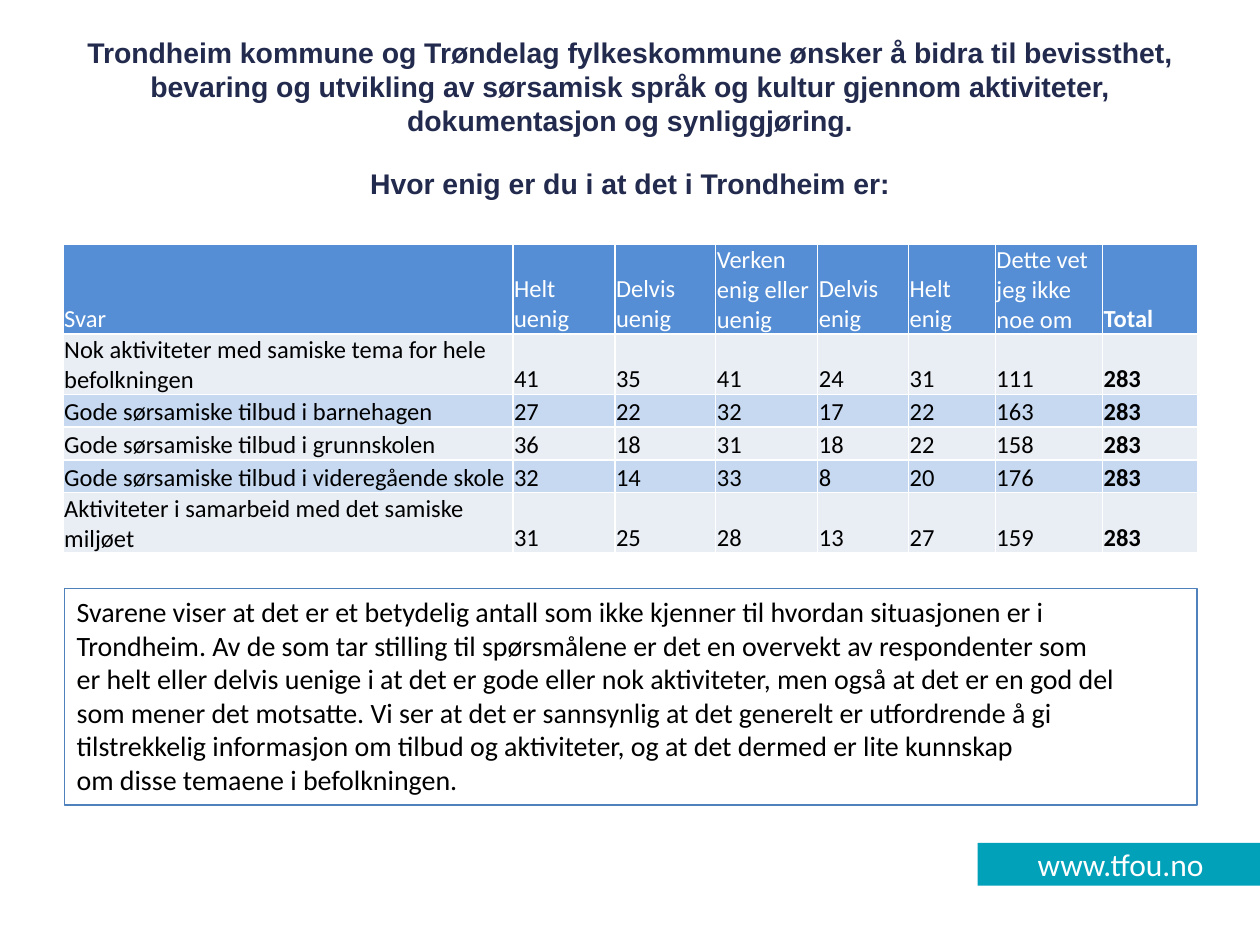
"""Build the survey slide on South Sámi services in Trondheim."""
from dataclasses import dataclass

from lxml.etree import SubElement
from pptx import Presentation
from pptx.dml.color import RGBColor
from pptx.enum.shapes import MSO_SHAPE as Shape
from pptx.enum.text import MSO_ANCHOR as Anchor, PP_ALIGN as Align
from pptx.oxml.ns import qn
from pptx.util import Inches, Pt


@dataclass(frozen=True)
class Style:
    size: float
    color: str
    font: str = "Calibri"
    bold: bool = False
    align: Align = Align.LEFT


@dataclass(frozen=True)
class Box:
    left: float
    top: float
    width: float
    height: float

    def lengths(self) -> list:
        return [Inches(v) for v in (self.left, self.top, self.width, self.height)]


TITLE = [
    "Trondheim kommune og Trøndelag fylkeskommune ønsker å bidra til bevissthet, "
    "bevaring og utvikling av sørsamisk språk og kultur gjennom aktiviteter, "
    "dokumentasjon og synliggjøring.",
    "Hvor enig er du i at det i Trondheim er:",
]
ROWS = [
    ["Svar", "Helt uenig", "Delvis uenig", "Verken enig eller uenig",
     "Delvis enig", "Helt enig", "Dette vet jeg ikke noe om", "Total"],
    ["Nok aktiviteter med samiske tema for hele befolkningen",
     41, 35, 41, 24, 31, 111, 283],
    ["Gode sørsamiske tilbud i barnehagen", 27, 22, 32, 17, 22, 163, 283],
    ["Gode sørsamiske tilbud i grunnskolen", 36, 18, 31, 18, 22, 158, 283],
    ["Gode sørsamiske tilbud i videregående skole", 32, 14, 33, 8, 20, 176, 283],
    ["Aktiviteter i samarbeid med det samiske miljøet",
     31, 25, 28, 13, 27, 159, 283],
]
WIDTHS = [3.57, 0.81, 0.8, 0.81, 0.72, 0.69, 0.85, 0.76]
HEIGHTS = [0.71, 0.48, 0.26, 0.26, 0.26, 0.48]
NOTE = [
    "Svarene viser at det er et betydelig antall som ikke kjenner til hvordan situasjonen er i",
    "Trondheim. Av de som tar stilling til spørsmålene er det en overvekt av respondenter som",
    "er helt eller delvis uenige i at det er gode eller nok aktiviteter, men også at det er en god del",
    "som mener det motsatte. Vi ser at det er sannsynlig at det generelt er utfordrende å gi",
    "tilstrekkelig informasjon om tilbud og aktiviteter, og at det dermed er lite kunnskap",
    "om disse temaene i befolkningen.",
]


def rgb(color: str) -> RGBColor:
    return RGBColor.from_string(color)


def write(frame, lines: list[str], style: Style, gap: float = 0) -> None:
    frame.word_wrap = True
    for i, line in enumerate(lines):
        para = frame.paragraphs[0] if i == 0 else frame.add_paragraph()
        para.text = line
        para.alignment = style.align
        if i and gap:
            para.space_before = Pt(gap)
        font = para.font
        font.size, font.name, font.bold = Pt(style.size), style.font, style.bold
        font.color.rgb = rgb(style.color)


def add_rect(slide, box: Box, fill: str = "", line: str = ""):
    rect = slide.shapes.add_shape(Shape.RECTANGLE, *box.lengths())
    rect.shadow.inherit = False
    if fill:
        rect.fill.solid()
        rect.fill.fore_color.rgb = rgb(fill)
    else:
        rect.fill.background()
    if line:
        rect.line.color.rgb = rgb(line)
        rect.line.width = Pt(0.75)
    else:
        rect.line.fill.background()
    return rect


def style_cell(cell, fill: str) -> None:
    cell.vertical_anchor = Anchor.BOTTOM
    cell.margin_left = cell.margin_right = cell.margin_top = Inches(0.01)
    cell.margin_bottom = 0
    props = cell._tc.get_or_add_tcPr()
    for side in ("a:lnL", "a:lnR", "a:lnT", "a:lnB"):
        edge = SubElement(props, qn(side), w=str(Pt(1)))
        SubElement(SubElement(edge, qn("a:solidFill")), qn("a:srgbClr"), val="FFFFFF")
    cell.fill.solid()
    cell.fill.fore_color.rgb = rgb(fill)


def add_grid(slide, box: Box) -> None:
    grid = slide.shapes.add_table(len(ROWS), len(WIDTHS), *box.lengths()).table
    grid.first_row = grid.horz_banding = False
    for col, width in zip(grid.columns, WIDTHS):
        col.width = Inches(width)
    for r, (row, height) in enumerate(zip(ROWS, HEIGHTS)):
        grid.rows[r].height = Inches(height)
        fill = ("C6D9F1", "E9EDF4")[r % 2] if r else "558ED5"
        color = "000000" if r else "FFFFFF"
        for c, value in enumerate(row):
            cell = grid.cell(r, c)
            style_cell(cell, fill)
            bold = c == len(row) - 1
            write(cell.text_frame, [str(value)], Style(14, color, bold=bold))


def main() -> None:
    deck = Presentation()
    deck.slide_width, deck.slide_height = Inches(10), Inches(7.5)
    slide = deck.slides.add_slide(deck.slide_layouts[6])

    site = add_rect(slide, Box(7.76, 6.69, 2.27, 0.34), fill="00A1B9").text_frame
    site.vertical_anchor = Anchor.MIDDLE
    write(site, ["www.tfou.no"], Style(18, "FFFFFF", align=Align.CENTER))

    title = slide.shapes.add_textbox(*Box(0.5, 0.31, 9, 1.25).lengths()).text_frame
    title.vertical_anchor = Anchor.MIDDLE
    write(title, TITLE, Style(16.2, "222A4D", "Arial", True, Align.CENTER), gap=16.5)

    add_grid(slide, Box(0.5, 1.94, sum(WIDTHS), sum(HEIGHTS)))

    note = add_rect(slide, Box(0.51, 4.67, 8.99, 1.72), line="4F81BD").text_frame
    note.vertical_anchor = Anchor.TOP
    write(note, NOTE, Style(16, "000000", align=Align.JUSTIFY))

    deck.save("out.pptx")


if __name__ == "__main__":
    main()
